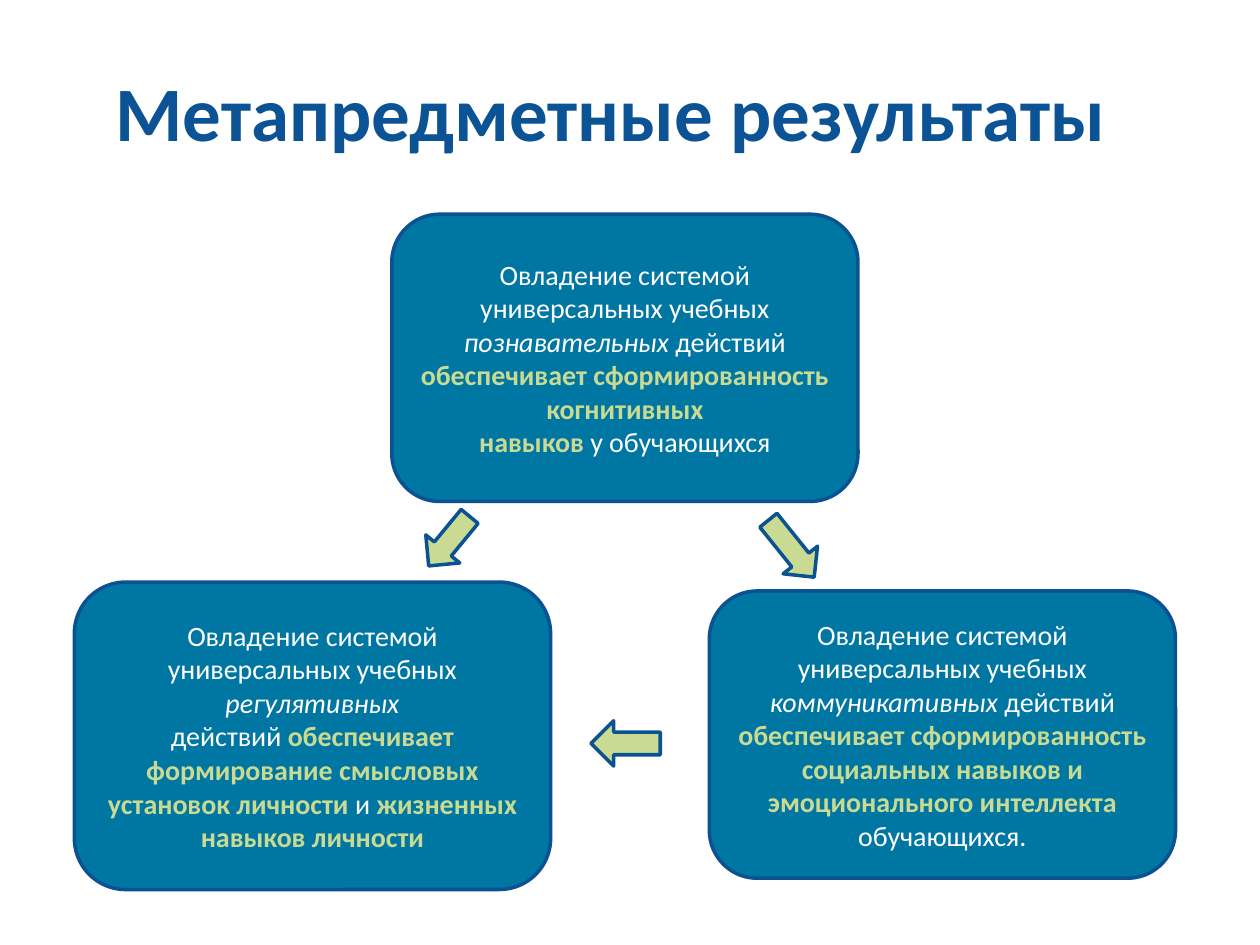
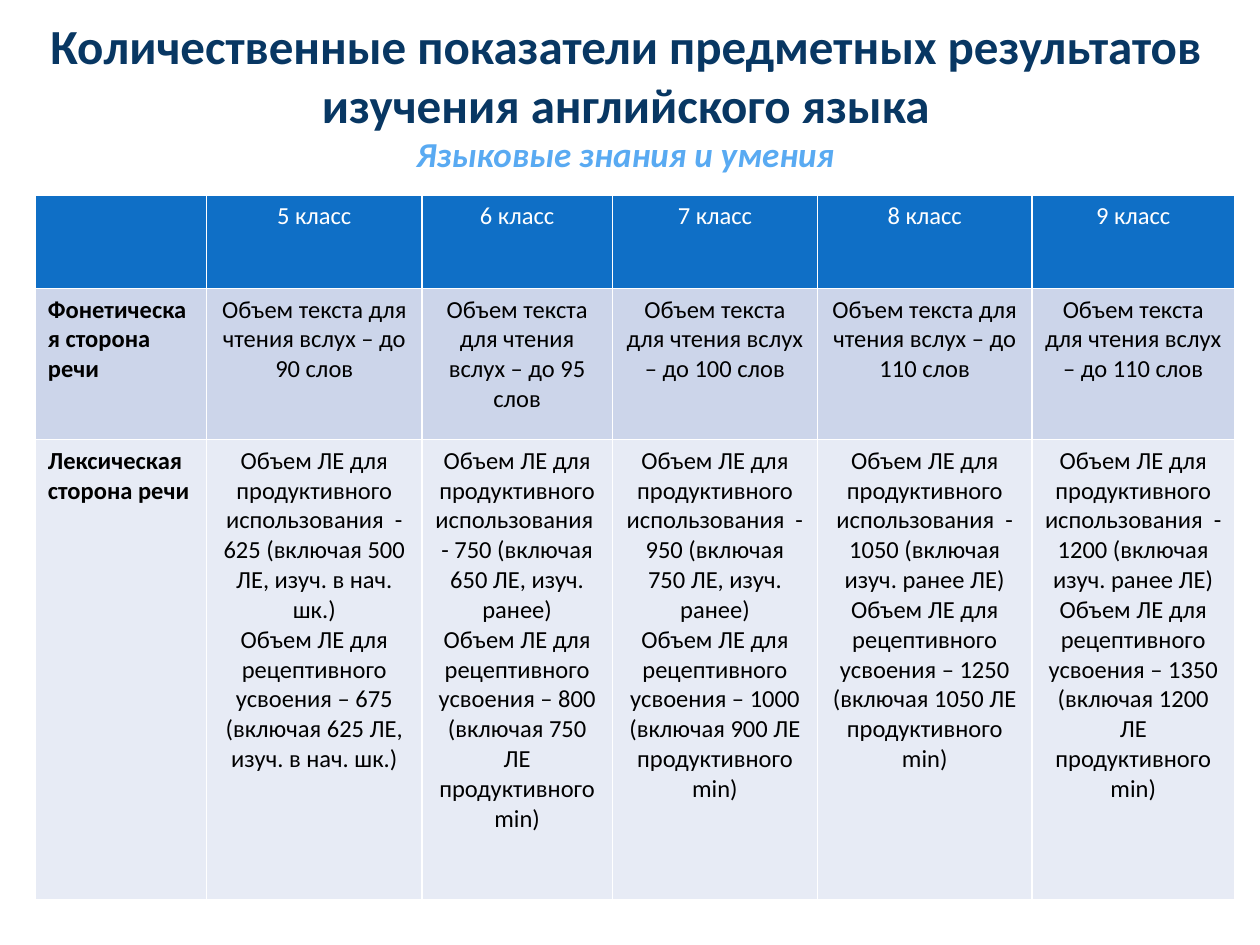
from pptx import Presentation
from pptx.dml.color import RGBColor
from pptx.enum.shapes import MSO_SHAPE
from pptx.enum.text import MSO_ANCHOR, MSO_AUTO_SIZE, PP_ALIGN
from pptx.util import Inches, Pt

ROUND_RECT = MSO_SHAPE.ROUNDED_RECTANGLE
RIGHT_ARROW = MSO_SHAPE.RIGHT_ARROW
MIDDLE = MSO_ANCHOR.MIDDLE
NO_AUTOFIT = MSO_AUTO_SIZE.NONE
CENTER, LEFT = PP_ALIGN.CENTER, PP_ALIGN.LEFT

FONT = "Calibri"
TITLE_BLUE, TITLE_NAVY, SUBTITLE_BLUE = "0B5394", "083763", "59AAF2"
BOX_FILL, OUTLINE, LIME = "0076A3", "0B5292", "C9DA92"
WHITE, BLACK = "FFFFFF", "000000"
ROW_FILLS = ["0F6FC6", "CCD5EA", "E7EBF5"]


def style(font, size, color, bold=False, italic=False):
    font.name = FONT
    font.size = Pt(size)
    font.bold = bold
    font.italic = italic
    font.color.rgb = RGBColor.from_string(color)


def add_shape(s, kind, box, fill):
    sp = s.shapes.add_shape(kind, *[Inches(v) for v in box])
    sp.shadow.inherit = False
    sp.fill.solid()
    sp.fill.fore_color.rgb = RGBColor.from_string(fill)
    sp.line.color.rgb = RGBColor.from_string(OUTLINE)
    sp.line.width = Pt(2)
    return sp


prs = Presentation()
prs.slide_width, prs.slide_height = Inches(10), Inches(7.5)

titles = [
    ((0.35, 0.29, 9, 1.17),
     [("Метапредметные результаты", 44, TITLE_BLUE, False)]),
    ((0.12, 0.13, 9.69, 1.25),
     [("Количественные показатели предметных результатов изучения английского языка",
       28, TITLE_NAVY, False),
      ("Языковые знания и умения", 20, SUBTITLE_BLUE, True)]),
]
for box, lines in titles:
    s = prs.slides.add_slide(prs.slide_layouts[5])
    title = s.shapes.title
    title.left, title.top, title.width, title.height = [Inches(v) for v in box]
    tf = title.text_frame
    tf.auto_size = NO_AUTOFIT
    tf.vertical_anchor = MIDDLE
    tf.text = "\n".join(line[0] for line in lines)
    for p, (text, size, color, italic) in zip(tf.paragraphs, lines):
        p.alignment = CENTER
        style(p.font, size, color, True, italic)

results_slide, figures_slide = prs.slides

# Each paragraph lists (text, kind): plain, italic or bold key phrase.
intro = ("Овладение системой универсальных учебных ", "plain")
skill_boxes = [
    ((3.11, 1.7, 3.7, 2.28), [
        [intro, ("познавательных ", "italic"), ("действий ", "plain"),
         ("обеспечивает сформированность когнитивных", "key")],
        [("навыков ", "key"), ("у обучающихся", "plain")]]),
    ((5.63, 4.69, 3.7, 2.28), [
        [intro, ("коммуникативных ", "italic"), ("действий ", "plain"),
         ("обеспечивает сформированность социальных навыков и "
          "эмоционального интеллекта ", "key"),
         ("обучающихся.", "plain")]]),
    ((0.59, 4.62, 3.78, 2.44), [
        [intro, ("регулятивных", "italic")],
        [("действий ", "plain"),
         ("обеспечивает формирование смысловых установок личности ", "key"),
         ("и ", "plain"), ("жизненных навыков личности", "key")]]),
]
for box, paragraphs in skill_boxes:
    sp = add_shape(results_slide, ROUND_RECT, box, BOX_FILL)
    tf = sp.text_frame
    tf.word_wrap = True
    tf.vertical_anchor = MIDDLE
    for i, runs in enumerate(paragraphs):
        p = tf.add_paragraph() if i else tf.paragraphs[0]
        p.alignment = CENTER
        for text, kind in runs:
            r = p.add_run()
            r.text = text
            style(r.font, 16, LIME if kind == "key" else WHITE,
                  kind == "key", kind == "italic")

arrows = [
    ((5.99, 4.18, 0.58, 0.35), 51.2),
    ((4.69, 5.72, 0.55, 0.36), 180),
    ((3.31, 4.12, 0.51, 0.35), 129.6),
]
for box, angle in arrows:
    sp = add_shape(results_slide, RIGHT_ARROW, box, LIME)
    sp.rotation = angle

grades = [5, 6, 7, 8, 9]
reading_words = [90, 95, 100, 110, 110]
vocabulary = [
    ("625 (включая 500 ЛЕ, изуч. в нач. шк.)", "675 (включая 625 ЛЕ, изуч. в нач. шк.)"),
    ("750 (включая 650 ЛЕ, изуч. ранее)", "800 (включая 750 ЛЕ продуктивного min)"),
    ("950 (включая 750 ЛЕ, изуч. ранее)", "1000 (включая 900 ЛЕ продуктивного min)"),
    ("1050 (включая изуч. ранее ЛЕ)", "1250 (включая 1050 ЛЕ продуктивного min)"),
    ("1200 (включая изуч. ранее ЛЕ)", "1350 (включая 1200 ЛЕ продуктивного min)"),
]
rows = [
    [""] + [f"{grade} класс" for grade in grades],
    ["Фонетическая сторона речи"]
    + [f"Объем текста для чтения вслух – до {words} слов" for words in reading_words],
    ["Лексическая сторона речи"]
    + [f"Объем ЛЕ для продуктивного использования  - {active}\n"
       f"Объем ЛЕ для рецептивного усвоения – {passive}" for active, passive in vocabulary],
]
col_widths = [1.36, 1.71, 1.51, 1.63, 1.7, 1.61]
row_heights = [0.74, 1.2, 3.65]
table = figures_slide.shapes.add_table(
    len(rows), len(col_widths), Inches(0.28), Inches(1.55),
    Inches(sum(col_widths)), Inches(sum(row_heights))).table
for column, width in zip(table.columns, col_widths):
    column.width = Inches(width)
for i, (texts, height, fill) in enumerate(zip(rows, row_heights, ROW_FILLS)):
    table.rows[i].height = Inches(height)
    for j, text in enumerate(texts):
        cell = table.cell(i, j)
        cell.fill.solid()
        cell.fill.fore_color.rgb = RGBColor.from_string(fill)
        cell.text = text
        for p in cell.text_frame.paragraphs:
            p.alignment = CENTER if j else LEFT
            style(p.font, 14, BLACK if i else WHITE, j == 0)

prs.save("out.pptx")
